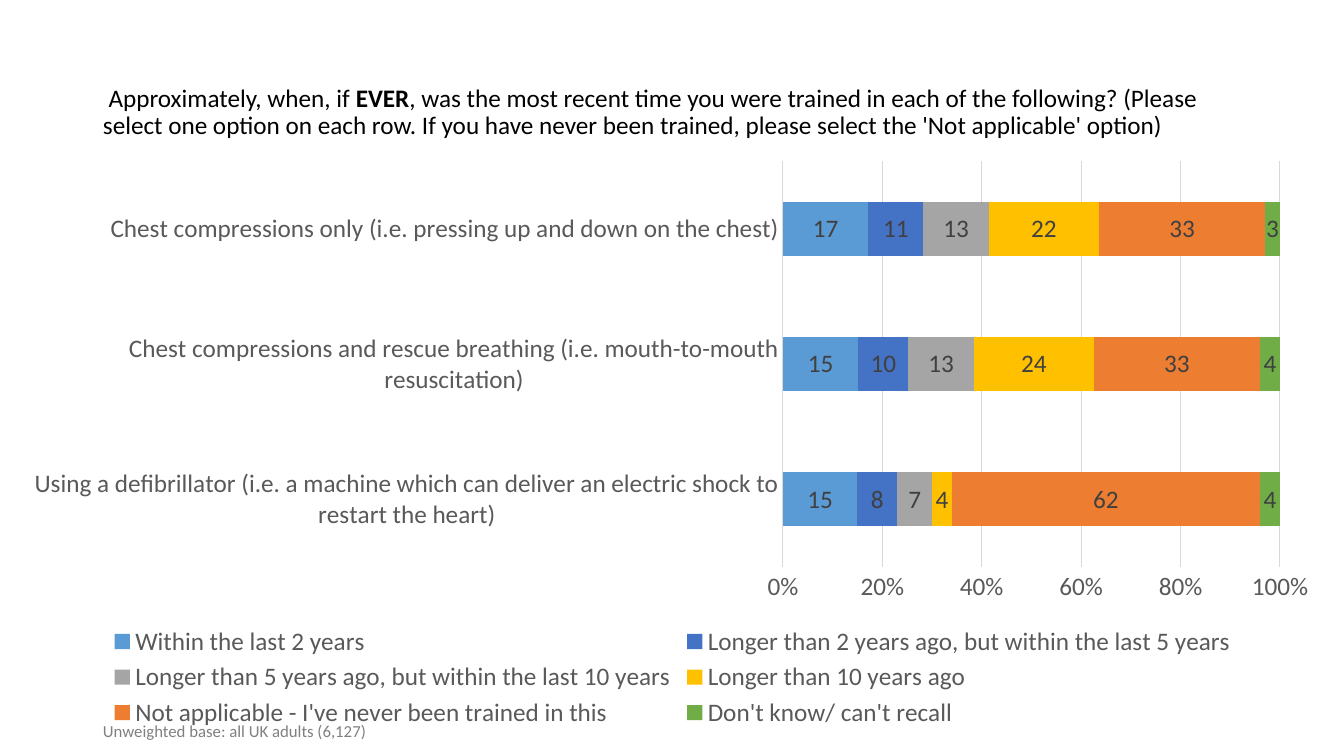
from dataclasses import dataclass

from lxml.etree import SubElement
from pptx import Presentation
from pptx.chart.data import CategoryChartData
from pptx.dml.color import RGBColor
from pptx.enum.chart import XL_CHART_TYPE, XL_LABEL_POSITION, XL_LEGEND_POSITION, XL_TICK_MARK
from pptx.enum.text import MSO_ANCHOR
from pptx.oxml.ns import qn
from pptx.util import Pt

QUESTION = [
    (" Approximately, when, if ", False),
    ("EVER", True),
    (", was the most recent time you were trained in each of the following? "
     "(Please select one option on each row. If you have never been trained, "
     "please select the 'Not applicable' option)", False),
]
BASE = [("Unweighted base: all UK adults (6,127)", False)]
TRAINING = [
    "Using a defibrillator (i.e. a machine which can deliver an electric shock to restart the heart)",
    "Chest compressions and rescue breathing (i.e. mouth-to-mouth resuscitation)",
    "Chest compressions only (i.e. pressing up and down on the chest)",
]
ANSWERS = [
    ("Within the last 2 years", (15, 15, 17), "5B9BD5"),
    ("Longer than 2 years ago, but within the last 5 years", (8, 10, 11), "4472C4"),
    ("Longer than 5 years ago, but within the last 10 years", (7, 13, 13), "A5A5A5"),
    ("Longer than 10 years ago", (4, 24, 22), "FFC000"),
    ("Not applicable - I've never been trained in this", (62, 33, 33), "ED7D31"),
    ("Don't know/ can't recall", (4, 4, 3), "70AD47"),
]

SLIDE = (1344, 756)
QUESTION_BOX = (93, 40, 1159, 146)
BASE_BOX = (93, 716, 1213, 30)
CHART_BOX = (9, 150, 1327, 583)
PLOT_BOX = (783, 161, 497, 406)


@dataclass(frozen=True)
class Theme:
    font: str = "Calibri"
    question: str = "000000"
    base: str = "808080"
    axis: str = "595959"
    label: str = "404040"
    grid: str = "D9D9D9"
    body_size: int = 18
    base_size: int = 12
    line: float = 0.75


THEME = Theme()


def px(n):
    return round(n * 914400 / 100.8)


def set_font(font, color, size=THEME.body_size):
    font.name = THEME.font
    font.size = Pt(size)
    font.color.rgb = RGBColor.from_string(color)


def set_line(line):
    line.color.rgb = RGBColor.from_string(THEME.grid)
    line.width = Pt(THEME.line)


def add_text(s, box, runs, color, size, anchor, spacing):
    tf = s.shapes.add_textbox(*map(px, box)).text_frame
    tf.word_wrap = True
    tf.vertical_anchor = anchor
    p = tf.paragraphs[0]
    p.line_spacing = spacing
    set_font(p.font, color, size)
    for text, bold in runs:
        r = p.add_run()
        r.text = text
        if bold:
            r.font.bold = True


def place_plot(chart):
    area = chart.plots[0]._element.getparent()
    layout = area.find(qn("c:layout"))
    if layout is None:
        layout = SubElement(area, qn("c:layout"))
        area.insert(0, layout)
    manual = SubElement(layout, qn("c:manualLayout"))
    left, top, width, height = CHART_BOX
    x, y, w, h = PLOT_BOX
    settings = [
        ("layoutTarget", "inner"), ("xMode", "edge"), ("yMode", "edge"),
        ("x", (x - left) / width), ("y", (y - top) / height),
        ("w", w / width), ("h", h / height),
    ]
    for tag, value in settings:
        SubElement(manual, qn(f"c:{tag}")).set("val", str(value))


def add_answers_chart(s):
    data = CategoryChartData(number_format="0")
    data.categories = TRAINING
    for name, values, _ in ANSWERS:
        data.add_series(name, values)
    chart = s.shapes.add_chart(
        XL_CHART_TYPE.BAR_STACKED_100, *map(px, CHART_BOX), data).chart
    set_font(chart.font, THEME.question)
    chart.has_title = False
    chart.has_legend = True
    chart.legend.position = XL_LEGEND_POSITION.BOTTOM
    chart.legend.include_in_layout = False
    set_font(chart.legend.font, THEME.axis)

    plot = chart.plots[0]
    plot.gap_width = 150
    plot.overlap = 100
    plot.vary_by_categories = False
    for series, (_, _, color) in zip(plot.series, ANSWERS):
        series.format.fill.solid()
        series.format.fill.fore_color.rgb = RGBColor.from_string(color)
        labels = series.data_labels
        labels.show_value = True
        labels.number_format = "0"
        labels.number_format_is_linked = False
        labels.position = XL_LABEL_POSITION.CENTER
        set_font(labels.font, THEME.label)

    for axis in (chart.category_axis, chart.value_axis):
        axis.major_tick_mark = XL_TICK_MARK.NONE
        axis.minor_tick_mark = XL_TICK_MARK.NONE
        set_font(axis.tick_labels.font, THEME.axis)
    set_line(chart.category_axis.format.line)
    value = chart.value_axis
    value.minimum_scale, value.maximum_scale, value.major_unit = 0, 1, 0.2
    value.tick_labels.number_format = "0%"
    value.tick_labels.number_format_is_linked = False
    value.format.line.fill.background()
    value.has_major_gridlines = True
    set_line(value.major_gridlines.format.line)
    place_plot(chart)


def main():
    prs = Presentation()
    prs.slide_width, prs.slide_height = map(px, SLIDE)
    s = prs.slides.add_slide(prs.slide_layouts[6])
    add_text(s, QUESTION_BOX, QUESTION, THEME.question, THEME.body_size, MSO_ANCHOR.MIDDLE, 0.9)
    add_text(s, BASE_BOX, BASE, THEME.base, THEME.base_size, MSO_ANCHOR.TOP, 1.0)
    add_answers_chart(s)
    prs.save("out.pptx")


if __name__ == "__main__":
    main()
